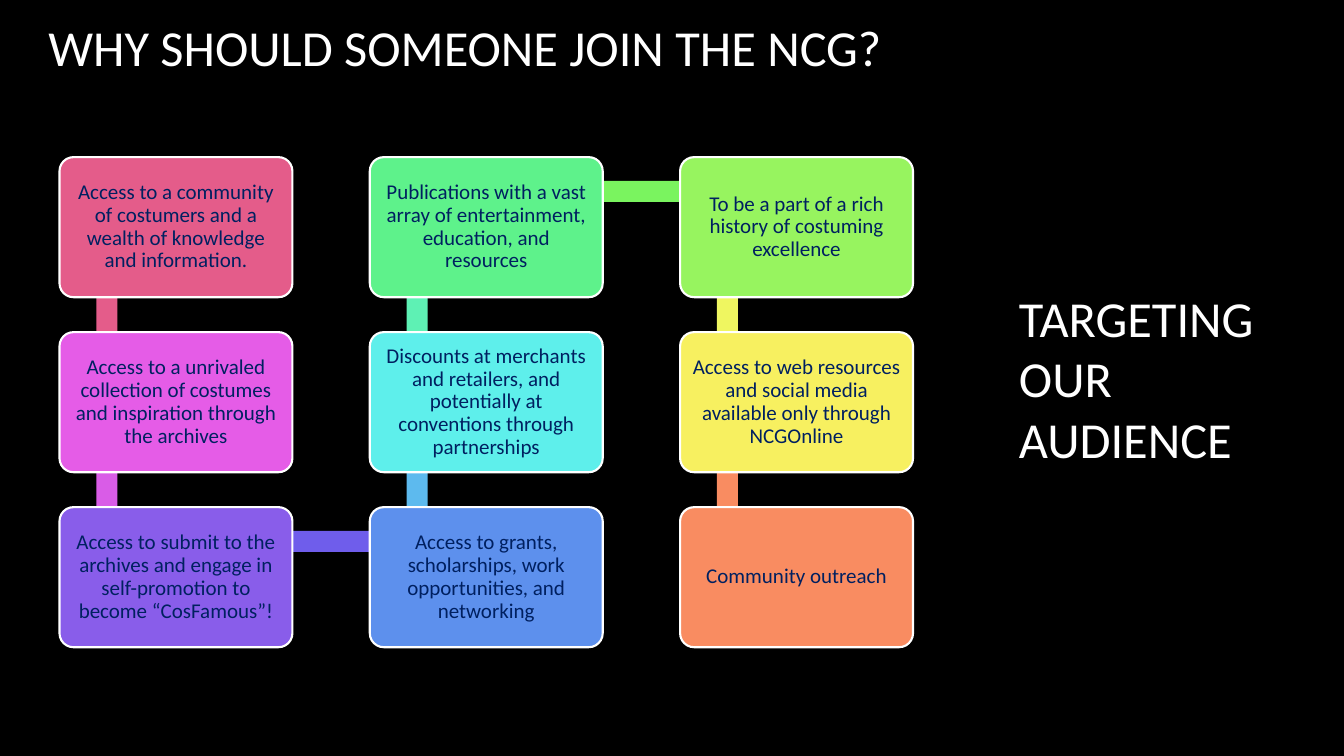
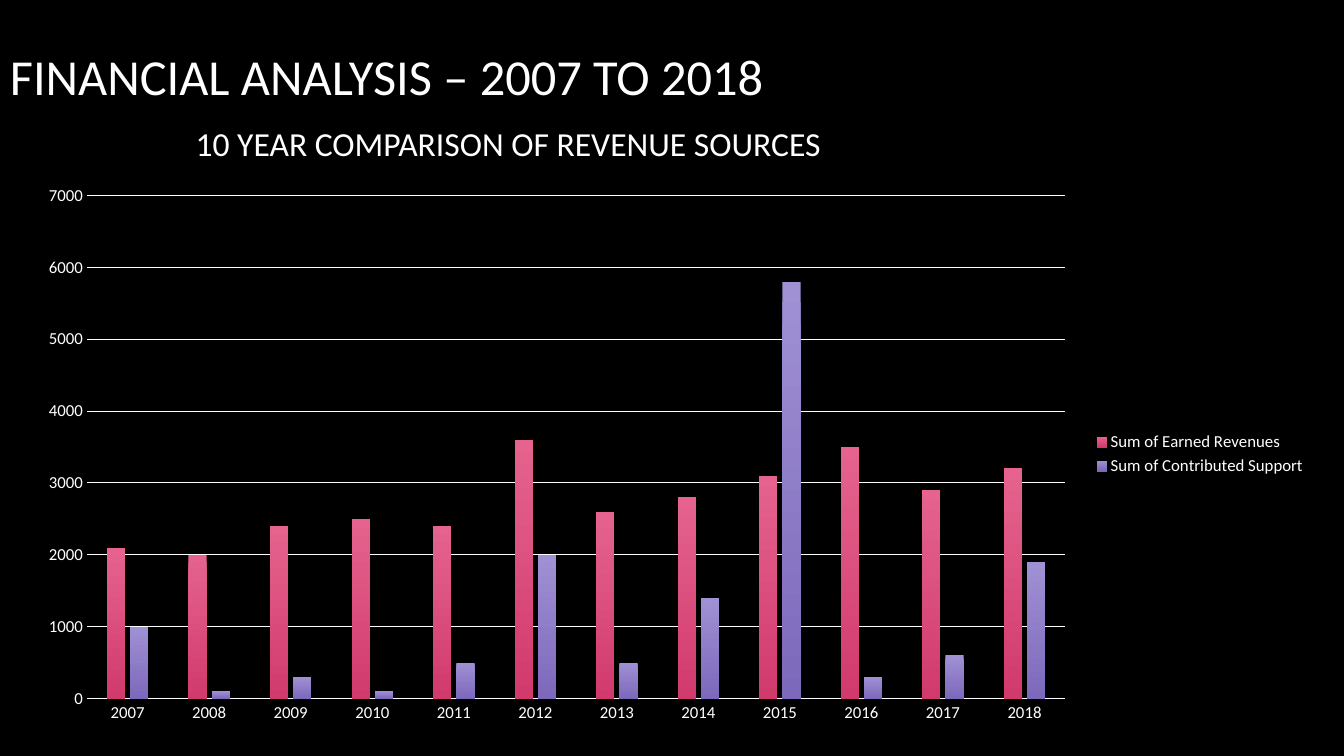
import dataclasses
import typing

import pptx
import pptx.chart.data
import pptx.dml.color
import pptx.enum.chart
import pptx.enum.shapes
import pptx.enum.text
import pptx.util

Cm = pptx.util.Cm
Pt = pptx.util.Pt

FONT = "Calibri"
COLORS = {
    "background": "000000",
    "light": "FFFFFF",
    "navy": "002060",
    "earned top": "E5638E",
    "earned bottom": "D13A6D",
    "support top": "A090D4",
    "support bottom": "7D69BB",
}

ROWS = 3
GRID_LEFT, GRID_TOP = 1.5, 3.96
COLUMN_PITCH, ROW_PITCH = 7.82, 4.41
CARD_WIDTH, CARD_HEIGHT = 5.87, 3.53
BAR_THICKNESS = 0.53


@dataclasses.dataclass(frozen=True)
class Box:
    """A rectangle in centimetres."""
    left: float
    top: float
    width: float
    height: float

    def lengths(self) -> tuple:
        return tuple(Cm(value) for value in dataclasses.astuple(self))


@dataclasses.dataclass(frozen=True)
class TitleLine:
    text: str
    size: int = 36
    indent: float = 0
    space_before: int = 0


@dataclasses.dataclass(frozen=True)
class Reason:
    """A card and the colour of the bar leading to the next card."""
    text: str
    fill: str
    bar: typing.Optional[str] = None


@dataclasses.dataclass(frozen=True)
class Series:
    name: str
    values: tuple
    top_color: str
    bottom_color: str


REASONS = (
    Reason("Access to a community of costumers and a wealth of knowledge and information.",
           "E45C8A", "E45C8A"),
    Reason("Access to a unrivaled collection of costumes and inspiration through the archives",
           "E55CE7", "D95CE7"),
    Reason("Access to submit to the archives and engage in self-promotion to become “CosFamous”!",
           "895DEA", "6F5DEB"),
    Reason("Access to grants, scholarships, work opportunities, and networking",
           "5D90ED", "5DBAEE"),
    Reason("Discounts at merchants and retailers, and potentially at conventions through partnerships",
           "5EEFEB", "5EF1B4"),
    Reason("Publications with a vast array of entertainment, education, and resources",
           "5EF28B", "7AF45F"),
    Reason("To be a part of a rich history of costuming excellence", "97F45F", "EFF660"),
    Reason("Access to web resources and social media available only through NCGOnline",
           "F7F060", "F98C61"),
    Reason("Community outreach", "F98C61"),
)

YEARS = [str(year) for year in range(2007, 2019)]
REVENUES = (
    Series("Sum of Earned Revenues",
           (2100, 2000, 2400, 2500, 2400, 3600, 2600, 2800, 3100, 3500, 2900, 3200),
           "earned top", "earned bottom"),
    Series("Sum of Contributed Support",
           (1000, 100, 300, 100, 500, 2000, 500, 1400, 5800, 300, 600, 1900),
           "support top", "support bottom"),
)


def rgb(color: str) -> pptx.dml.color.RGBColor:
    """Turn a colour name or a hex string into a colour."""
    return pptx.dml.color.RGBColor.from_string(COLORS.get(color, color))


def set_formats(target: typing.Any, formats: dict) -> None:
    for name, value in formats.items():
        setattr(target, name, value)


def set_font(font: typing.Any, size: float, color: str = "light") -> None:
    set_formats(font, {"name": FONT, "size": Pt(size), "bold": False})
    font.color.rgb = rgb(color)


def set_line(line: typing.Any, width: float) -> None:
    line.color.rgb = rgb("light")
    line.width = Pt(width)


def add_title(slide: typing.Any, box: Box, lines: typing.Sequence[TitleLine]) -> None:
    frame = slide.shapes.add_textbox(*box.lengths()).text_frame
    set_formats(frame, {
        "word_wrap": True,
        "vertical_anchor": pptx.enum.text.MSO_ANCHOR.MIDDLE,
    })
    for index, line in enumerate(lines):
        paragraph = frame.add_paragraph() if index else frame.paragraphs[0]
        paragraph.text = line.text
        if line.space_before:
            paragraph.space_before = Pt(line.space_before)
        if line.indent:
            paragraph._p.get_or_add_pPr().set("marL", str(Cm(line.indent)))
        set_font(paragraph.runs[0].font, line.size)


def add_filled_shape(slide: typing.Any, kind: typing.Any, box: Box, fill: str) -> typing.Any:
    shape = slide.shapes.add_shape(kind, *box.lengths())
    shape.shadow.inherit = False
    shape.fill.solid()
    shape.fill.fore_color.rgb = rgb(fill)
    shape.line.fill.background()
    return shape


def card_box(index: int) -> Box:
    """Place cards in columns, running down and up by turns."""
    column, step = divmod(index, ROWS)
    row = ROWS - 1 - step if column % 2 else step
    return Box(GRID_LEFT + column * COLUMN_PITCH, GRID_TOP + row * ROW_PITCH,
               CARD_WIDTH, CARD_HEIGHT)


def bar_box(index: int) -> Box:
    """Span from a card to the next one, across or along a column."""
    here, following = card_box(index), card_box(index + 1)
    if here.left != following.left:
        return Box(here.left + 1.19, here.top + 0.6, COLUMN_PITCH, BAR_THICKNESS)
    return Box(here.left + 0.93, min(here.top, following.top) + 0.88,
               BAR_THICKNESS, ROW_PITCH)


def add_card(slide: typing.Any, box: Box, reason: Reason) -> None:
    card = add_filled_shape(slide, pptx.enum.shapes.MSO_SHAPE.ROUNDED_RECTANGLE,
                            box, reason.fill)
    card.adjustments[0] = 0.1
    set_line(card.line, 1.5)
    frame = card.text_frame
    margins = ("margin_left", "margin_top", "margin_right", "margin_bottom")
    set_formats(frame, {
        **dict.fromkeys(margins, Cm(0.15)),
        "word_wrap": True,
        "vertical_anchor": pptx.enum.text.MSO_ANCHOR.MIDDLE,
    })
    paragraph = frame.paragraphs[0]
    paragraph.text = reason.text
    set_formats(paragraph, {
        "alignment": pptx.enum.text.PP_ALIGN.CENTER,
        "line_spacing": 0.9,
    })
    set_font(paragraph.runs[0].font, 15, "navy")


def add_revenue_chart(slide: typing.Any, box: Box) -> None:
    data = pptx.chart.data.CategoryChartData()
    data.categories = YEARS
    for revenue in REVENUES:
        data.add_series(revenue.name, revenue.values)
    chart = slide.shapes.add_chart(
        pptx.enum.chart.XL_CHART_TYPE.COLUMN_CLUSTERED, *box.lengths(), data).chart
    set_formats(chart, {"has_title": False, "has_legend": True})
    set_font(chart.font, 10)

    set_formats(chart.legend, {
        "position": pptx.enum.chart.XL_LEGEND_POSITION.RIGHT,
        "include_in_layout": False,
    })
    set_font(chart.legend.font, 12)

    for axis in (chart.category_axis, chart.value_axis):
        set_formats(axis, {
            "major_tick_mark": pptx.enum.chart.XL_TICK_MARK.NONE,
            "minor_tick_mark": pptx.enum.chart.XL_TICK_MARK.NONE,
        })
        set_font(axis.tick_labels.font, 12)
    set_line(chart.category_axis.format.line, 0.75)
    set_formats(chart.value_axis, {
        "minimum_scale": 0,
        "maximum_scale": 7000,
        "major_unit": 1000,
        "has_major_gridlines": True,
    })
    chart.value_axis.format.line.fill.background()
    set_line(chart.value_axis.major_gridlines.format.line, 0.75)

    plot = chart.plots[0]
    set_formats(plot, {"gap_width": 219, "overlap": -27, "vary_by_categories": False})
    for series, revenue in zip(plot.series, REVENUES):
        series.invert_if_negative = False
        fill = series.format.fill
        fill.gradient()
        fill.gradient_angle = 270
        for stop, color in zip(fill.gradient_stops,
                               (revenue.top_color, revenue.bottom_color)):
            stop.color.rgb = rgb(color)


def build_reasons_slide(slide: typing.Any) -> None:
    add_title(slide, Box(25.43, 2.21, 8.2, 14.6), [TitleLine("TARGETING OUR AUDIENCE")])
    add_title(slide, Box(0.97, -0.84, 28.14, 4.04),
              [TitleLine("WHY SHOULD SOMEONE JOIN THE NCG?")])
    for index, reason in enumerate(REASONS):
        if reason.bar:
            add_filled_shape(slide, pptx.enum.shapes.MSO_SHAPE.RECTANGLE,
                             bar_box(index), reason.bar)
    for index, reason in enumerate(REASONS):
        add_card(slide, card_box(index), reason)


def build_finance_slide(slide: typing.Any) -> None:
    add_title(slide, Box(0, 0.15, 33.8, 4.95), [
        TitleLine("FINANCIAL ANALYSIS – 2007 TO 2018"),
        TitleLine("10 YEAR COMPARISON OF REVENUE SOURCES", 24, 4.68, 12),
    ])
    add_revenue_chart(slide, Box(0.58, 4.39, 32.61, 14.1))


def main() -> None:
    presentation = pptx.Presentation()
    set_formats(presentation, {"slide_width": Cm(33.87), "slide_height": Cm(19.05)})
    background = presentation.slide_master.background.fill
    background.solid()
    background.fore_color.rgb = rgb("background")
    blank_layout = presentation.slide_layouts[6]
    for build in (build_reasons_slide, build_finance_slide):
        build(presentation.slides.add_slide(blank_layout))
    presentation.save("out.pptx")


if __name__ == "__main__":
    main()
